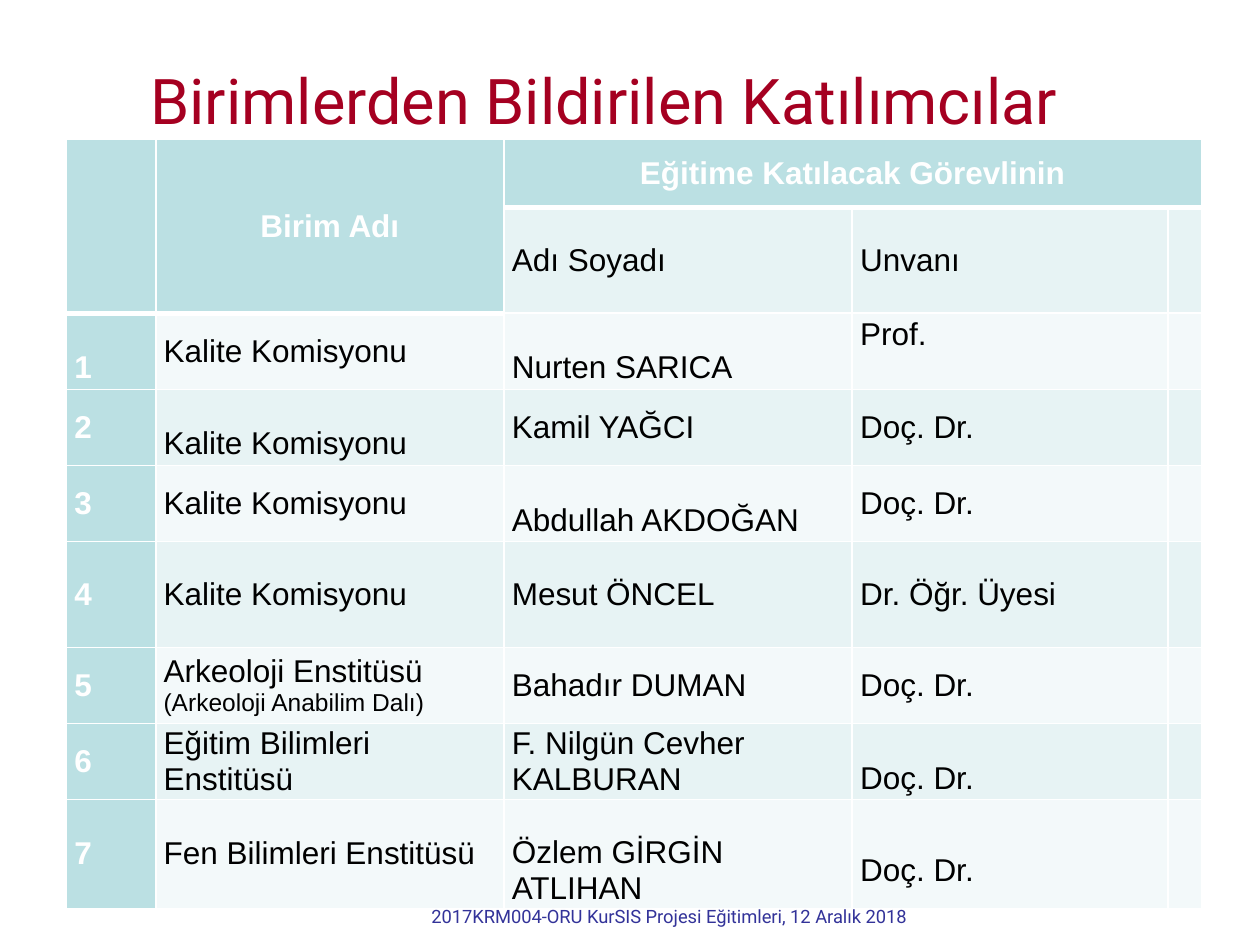
from lxml.etree import SubElement
from pptx import Presentation
from pptx.dml.color import RGBColor
from pptx.enum.text import MSO_ANCHOR as Anchor, PP_ALIGN as Align
from pptx.oxml.ns import qn
from pptx.util import Pt

COLORS = {"title": "A50021", "footer": "333399", "header": "BBE0E3", "odd": "F3F9FA",
          "even": "E7F3F4", "light": "FFFFFF", "dark": "000000"}
COLUMN_WIDTHS = [51, 199, 199, 180.5, 19]
LOW, TALL = 43.5, 60.5
ROW_HEIGHTS = [39, TALL, LOW, LOW, LOW, TALL, LOW, LOW, TALL]
LINE_SHIFT = 19
HEADINGS = [["", "Birim Adı", "Eğitime Katılacak Görevlinin", "", ""],
            ["", "", "Adı Soyadı", "Unvanı", ""]]
PARTICIPANTS = [
    ["1", "Kalite Komisyonu", "Nurten SARICA", "Prof.", ""],
    ["2", "Kalite Komisyonu", "Kamil YAĞCI", "Doç. Dr.", ""],
    ["3", "Kalite Komisyonu", "Abdullah AKDOĞAN", "Doç. Dr.", ""],
    ["4", "Kalite Komisyonu", "Mesut ÖNCEL", "Dr. Öğr. Üyesi", ""],
    ["5", "Arkeoloji Enstitüsü\n(Arkeoloji Anabilim Dalı)", "Bahadır DUMAN", "Doç. Dr.", ""],
    ["6", "Eğitim Bilimleri Enstitüsü", "F. Nilgün Cevher KALBURAN", "Doç. Dr.", ""],
    ["7", "Fen Bilimleri Enstitüsü", "Özlem GİRGİN ATLIHAN", "Doç. Dr.", ""],
]
LOWERED = {(2, 0), (2, 2), (3, 1), (4, 2), (7, 3), (8, 2), (8, 3)}
RAISED = {(2, 3)}


class SlideBuilder:
    """Holds the style and the current slide, and adds each kind of element."""

    def __init__(self, slide):
        self.slide = slide
        self.table_font = "Arial"
        self.text_font = "Roboto"

    def color(self, key):
        return RGBColor.from_string(COLORS[key])

    def style(self, paragraph, font, size, color, bold=False):
        for run in paragraph.runs:
            run.font.name = font
            run.font.size = Pt(size)
            run.font.bold = bold
            run.font.color.rgb = self.color(color)

    def text(self, wording, left, top, width, height, size, color):
        box = self.slide.shapes.add_textbox(Pt(left), Pt(top), Pt(width), Pt(height))
        frame = box.text_frame
        frame.word_wrap = True
        frame.vertical_anchor = Anchor.MIDDLE
        frame.text = wording
        paragraph = frame.paragraphs[0]
        paragraph.alignment = Align.CENTER
        self.style(paragraph, self.text_font, size, color)
        return paragraph

    def borders(self, cell, top, bottom):
        properties = cell._tc.get_or_add_tcPr()
        for side, width in (("L", 1), ("R", 1), ("T", top), ("B", bottom)):
            line = SubElement(properties, qn(f"a:ln{side}"), w=str(Pt(width)))
            SubElement(SubElement(line, qn("a:solidFill")), qn("a:srgbClr"), val=COLORS["light"])

    def cell(self, cell, wording, row, column):
        header_end = 1 if column < 2 else 0
        in_header = row <= header_end
        emphasized = in_header or column == 0
        self.borders(cell, 3 if row == header_end + 1 else 1, 3 if in_header else 1)
        cell.fill.solid()
        band = "odd" if row % 2 == 0 else "even"
        cell.fill.fore_color.rgb = self.color("header" if emphasized else band)
        cell.vertical_anchor = Anchor.MIDDLE
        cell.margin_left = cell.margin_right = Pt(4.5)
        cell.margin_top = Pt(LINE_SHIFT if (row, column) in LOWERED else 0)
        cell.margin_bottom = Pt(LINE_SHIFT if (row, column) in RAISED else 0)
        cell.text_frame.text = wording
        for paragraph in cell.text_frame.paragraphs:
            size = 14 if paragraph.text.startswith("(") else 18
            paragraph.alignment = Align.CENTER if in_header else Align.LEFT
            self.style(paragraph, self.table_font, size,
                       "light" if emphasized else "dark", emphasized)

    def table(self, rows, left, top):
        frame = self.slide.shapes.add_table(
            len(rows), len(COLUMN_WIDTHS), Pt(left), Pt(top),
            Pt(sum(COLUMN_WIDTHS)), Pt(sum(ROW_HEIGHTS)))
        table = frame.table
        table.first_row = table.horz_banding = False
        for column, width in zip(table.columns, COLUMN_WIDTHS):
            column.width = Pt(width)
        for row, height in zip(table.rows, ROW_HEIGHTS):
            row.height = Pt(height)
        for row, wordings in enumerate(rows):
            for column, wording in enumerate(wordings):
                self.cell(table.cell(row, column), wording, row, column)
        for start, end in (((0, 0), (1, 0)), ((0, 1), (1, 1)), ((0, 2), (0, 4))):
            table.cell(*start).merge(table.cell(*end))


def main():
    presentation = Presentation()
    presentation.slide_width, presentation.slide_height = Pt(720), Pt(540)
    builder = SlideBuilder(presentation.slides.add_slide(presentation.slide_layouts[6]))
    title = builder.text("Birimlerden Bildirilen Katılımcılar", 6.5, 21, 677.5, 62.5, 36, "title")
    title.line_spacing = 1.2
    title.space_before, title.space_after = Pt(12), Pt(18)
    builder.text("2017KRM004-ÖRÜ KurSİS Projesi Eğitimleri, 12 Aralık 2018",
                 206.5, 515.5, 352, 16.5, 10.5, "footer")
    builder.table(HEADINGS + PARTICIPANTS, 38, 79.5)
    presentation.save("out.pptx")


if __name__ == "__main__":
    main()
